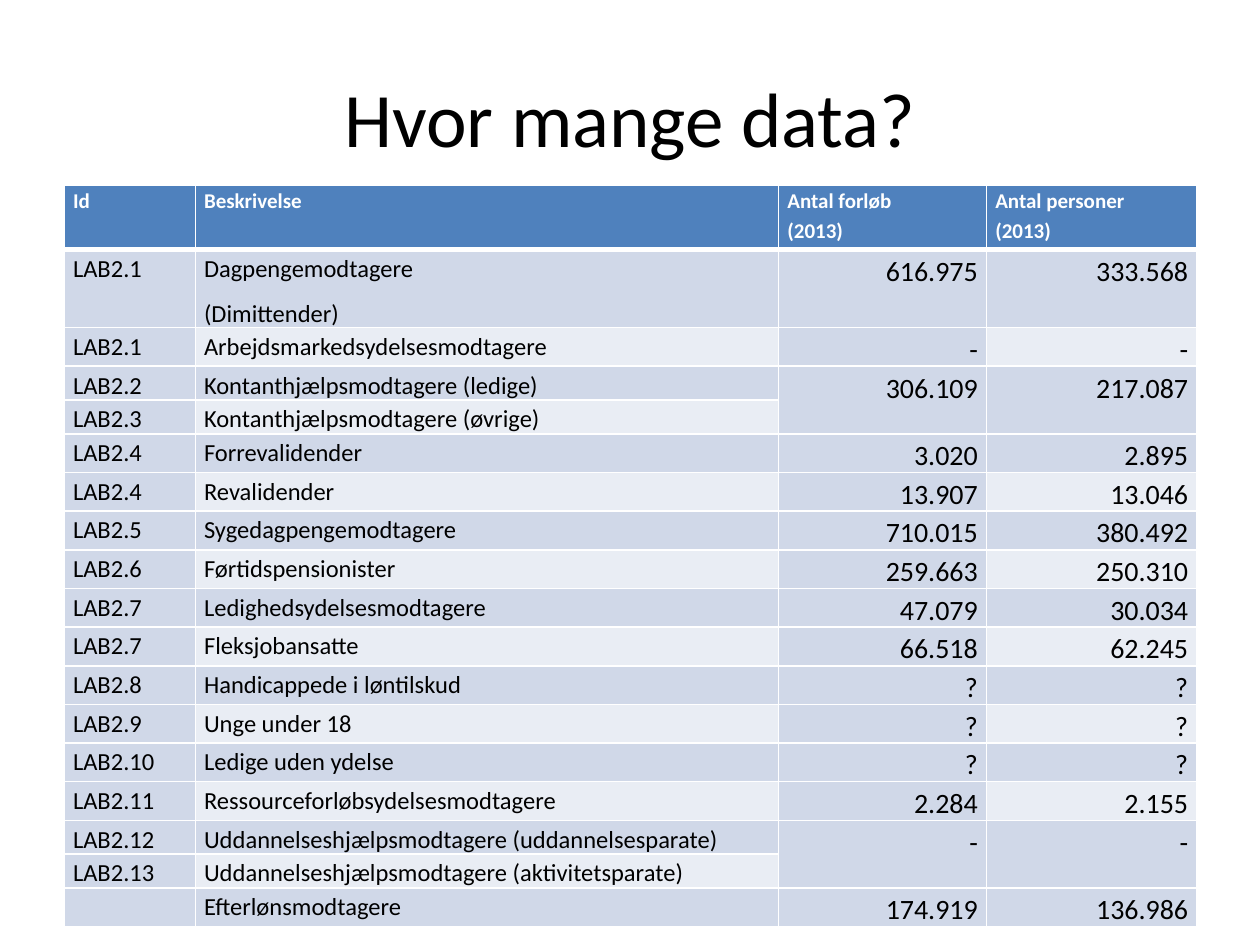
from dataclasses import dataclass
from typing import NamedTuple, Optional

from lxml.etree import SubElement
from pptx import Presentation
from pptx.dml.color import RGBColor
from pptx.enum.text import MSO_ANCHOR, PP_ALIGN
from pptx.oxml.ns import qn
from pptx.util import Inches, Pt


@dataclass(frozen=True)
class Theme:
    font: str = "Calibri"
    ink: str = "000000"
    white: str = "FFFFFF"
    head: str = "4F81BD"
    dark: str = "D0D8E8"
    light: str = "E9EDF4"
    title: int = 44
    label: int = 12
    body: int = 14
    number: int = 16
    thin: int = 1
    thick: int = 3


class Group(NamedTuple):
    code: str
    name: str
    spells: Optional[str] = None  # None: shares the cell above
    people: Optional[str] = None


THEME = Theme()
WIDTHS = (1.04, 4.63, 1.65, 1.67)
HEAD = Group("Id", "Beskrivelse", "Antal forløb\v(2013)", "Antal personer\v(2013)")
GROUPS = (
    Group("LAB2.1", "Dagpengemodtagere\n(Dimittender)", "616.975", "333.568"),
    Group("LAB2.1", "Arbejdsmarkedsydelsesmodtagere", "-", "-"),
    Group("LAB2.2", "Kontanthjælpsmodtagere (ledige)", "306.109", "217.087"),
    Group("LAB2.3", "Kontanthjælpsmodtagere (øvrige)"),
    Group("LAB2.4", "Forrevalidender", "3.020", "2.895"),
    Group("LAB2.4", "Revalidender", "13.907", "13.046"),
    Group("LAB2.5", "Sygedagpengemodtagere", "710.015", "380.492"),
    Group("LAB2.6", "Førtidspensionister", "259.663", "250.310"),
    Group("LAB2.7", "Ledighedsydelsesmodtagere", "47.079", "30.034"),
    Group("LAB2.7", "Fleksjobansatte", "66.518", "62.245"),
    Group("LAB2.8", "Handicappede i løntilskud", "?", "?"),
    Group("LAB2.9", "Unge under 18", "?", "?"),
    Group("LAB2.10", "Ledige uden ydelse", "?", "?"),
    Group("LAB2.11", "Ressourceforløbsydelsesmodtagere", "2.284", "2.155"),
    Group("LAB2.12", "Uddannelseshjælpsmodtagere (uddannelsesparate)", "-", "-"),
    Group("LAB2.13", "Uddannelseshjælpsmodtagere (aktivitetsparate)"),
    Group("", "Efterlønsmodtagere", "174.919", "136.986"),
)


def style(para, size: int, color: str, align, bold: bool = False) -> None:
    para.alignment = align
    for run in para.runs:
        font = run.font
        font.name, font.size, font.bold = THEME.font, Pt(size), bold
        font.color.rgb = RGBColor.from_string(color)


def border(cell, row: int) -> None:
    """White rules, with a thick one under the header."""
    props = cell._tc.get_or_add_tcPr()
    for side in "LRTB":
        thick = (row, side) in ((0, "B"), (1, "T"))
        width = Pt(THEME.thick if thick else THEME.thin)
        line = SubElement(props, qn(f"a:ln{side}"), w=str(width))
        fill = SubElement(line, qn("a:solidFill"))
        SubElement(fill, qn("a:srgbClr"), val=THEME.white)


def shade(row: int, col: int) -> str:
    if row == 0:
        return THEME.head
    return THEME.light if col % 2 and row % 2 == 0 else THEME.dark


def draw_cell(cell, row: int, col: int, text: Optional[str]) -> None:
    border(cell, row)
    cell.fill.solid()
    cell.fill.fore_color.rgb = RGBColor.from_string(shade(row, col))
    cell.margin_left = cell.margin_right = Inches(0.07)
    cell.margin_top = cell.margin_bottom = 0
    if not text:
        return
    cell.text_frame.text = text
    number = row > 0 and col > 1
    size = THEME.number if number else THEME.body if row else THEME.label
    for para in cell.text_frame.paragraphs:
        style(para, size, THEME.ink if row else THEME.white,
              PP_ALIGN.RIGHT if number else PP_ALIGN.LEFT, bold=row == 0)
        para.line_spacing = 1.15
        para.space_before = para.space_after = Pt(3)


def draw_title(slide, text: str) -> None:
    box = slide.shapes.add_textbox(Inches(0.5), Inches(0.3), Inches(9), Inches(1.25))
    frame = box.text_frame
    frame.word_wrap = True
    frame.vertical_anchor = MSO_ANCHOR.MIDDLE
    frame.text = text
    style(frame.paragraphs[0], THEME.title, THEME.ink, PP_ALIGN.CENTER)


def draw_table(slide) -> None:
    rows = (HEAD, *GROUPS)
    heights = (0.51, 0.57) + (0.23,) * (len(rows) - 2)
    table = slide.shapes.add_table(
        len(rows), len(WIDTHS), Inches(0.51), Inches(1.47),
        Inches(sum(WIDTHS)), Inches(sum(heights))).table
    table.horz_banding = False
    for col, width in zip(table.columns, WIDTHS):
        col.width = Inches(width)
    for r, (group, height) in enumerate(zip(rows, heights)):
        table.rows[r].height = Inches(height)
        for c, text in enumerate(group):
            draw_cell(table.cell(r, c), r, c, text)
            if text is None:
                table.cell(r - 1, c).merge(table.cell(r, c))


def main() -> None:
    deck = Presentation()
    deck.slide_width, deck.slide_height = Inches(10), Inches(7.5)
    slide = deck.slides.add_slide(deck.slide_layouts[6])
    draw_title(slide, "Hvor mange data?")
    draw_table(slide)
    deck.save("out.pptx")


if __name__ == "__main__":
    main()
